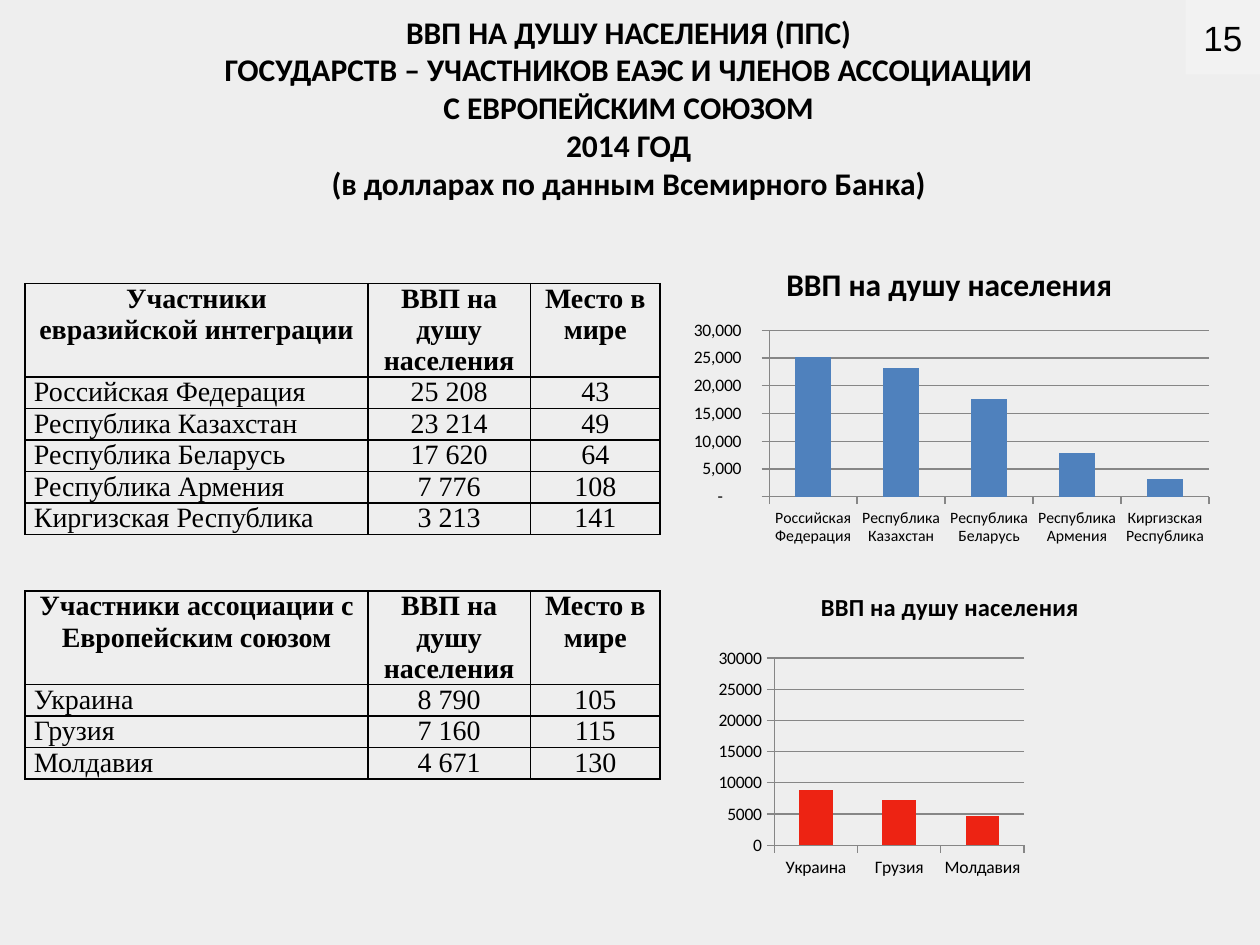
from lxml import etree
from pptx import Presentation
from pptx.chart.data import CategoryChartData
from pptx.dml.color import RGBColor
from pptx.enum.chart import XL_CHART_TYPE, XL_TICK_MARK
from pptx.enum.shapes import MSO_SHAPE
from pptx.enum.text import MSO_ANCHOR, MSO_AUTO_SIZE, PP_ALIGN
from pptx.oxml import parse_xml
from pptx.oxml.ns import nsdecls, qn
from pptx.util import Inches, Pt

COLUMNS = XL_CHART_TYPE.COLUMN_CLUSTERED
TICK_OUT = XL_TICK_MARK.OUTSIDE
RECTANGLE = MSO_SHAPE.RECTANGLE
TOP, MIDDLE = MSO_ANCHOR.TOP, MSO_ANCHOR.MIDDLE
NO_AUTOFIT = MSO_AUTO_SIZE.NONE
LEFT, CENTER = PP_ALIGN.LEFT, PP_ALIGN.CENTER

COLORS = {
    "background": "EEEEEE",
    "text": "000000",
    "number": "FFFFFF",
    "union": "4F81BD",
    "association": "ED2313",
    "grid": "868686",
}
GDP = "ВВП на душу населения"


def rgb(name):
    return RGBColor.from_string(COLORS[name])


def set_font(font, **values):
    for attribute, value in values.items():
        setattr(font, attribute, value)
    font.color.rgb = rgb("text")


prs = Presentation()
prs.slide_width, prs.slide_height = Inches(10), Inches(7.5)
slide = prs.slides.add_slide(prs.slide_layouts[5])
slide.background.fill.solid()
slide.background.fill.fore_color.rgb = rgb("background")

# Title
heading = slide.shapes.title
heading.left, heading.top = Inches(0.02), Inches(0.05)
heading.width, heading.height = Inches(9.94), Inches(1.62)
heading_frame = heading.text_frame
heading_frame.text = "\n".join([
    "ВВП НА ДУШУ НАСЕЛЕНИЯ (ППС)",
    "ГОСУДАРСТВ – УЧАСТНИКОВ ЕАЭС И ЧЛЕНОВ АССОЦИАЦИИ",
    "С ЕВРОПЕЙСКИМ СОЮЗОМ",
    "2014 ГОД",
    "(в долларах по данным Всемирного Банка)",
])
heading_frame.auto_size = NO_AUTOFIT
heading_frame.vertical_anchor = TOP
for line in heading_frame.paragraphs:
    line.alignment = CENTER
    set_font(line.font, name="Calibri", size=Pt(18), bold=True)

# Tables: top edge, heading of the first column, rows
tables = [
    (2.25, "Участники\nевразийской интеграции", [
        ("Российская Федерация", "25 208", "43"),
        ("Республика Казахстан", "23 214", "49"),
        ("Республика Беларусь", "17 620", "64"),
        ("Республика Армения", "7 776", "108"),
        ("Киргизская Республика", "3 213", "141"),
    ]),
    (4.69, "Участники ассоциации с Европейским союзом", [
        ("Украина", "8 790", "105"),
        ("Грузия", "7 160", "115"),
        ("Молдавия", "4 671", "130"),
    ]),
]
column_widths = [2.72, 1.29, 1.03]
header_height, row_height = 0.74, 0.25
for top, members, countries in tables:
    rows = [(members, GDP, "Место в мире"), *countries]
    table = slide.shapes.add_table(
        len(rows), 3, Inches(0.2), Inches(top), Inches(sum(column_widths)),
        Inches(header_height + row_height * len(countries))).table
    table.first_row = table.horz_banding = False
    for column, width in zip(table.columns, column_widths):
        column.width = Inches(width)
    for r, row in enumerate(rows):
        table.rows[r].height = Inches(row_height if r else header_height)
        for c, text in enumerate(row):
            cell = table.cell(r, c)
            cell.text = text
            cell.margin_left = cell.margin_right = Inches(0.07)
            cell.margin_top = cell.margin_bottom = 0
            cell.fill.background()
            for paragraph in cell.text_frame.paragraphs:
                paragraph.alignment = LEFT if r and c == 0 else CENTER
                set_font(paragraph.font, name="Times New Roman", size=Pt(16), bold=r == 0)
            # Cell borders
            for i, side in enumerate(("lnL", "lnR", "lnT", "lnB")):
                cell._tc.get_or_add_tcPr().insert(i, parse_xml(
                    f'<a:{side} {nsdecls("a")} w="{Pt(1)}"><a:solidFill>'
                    f'<a:srgbClr val="{COLORS["text"]}"/></a:solidFill></a:{side}>'))

# Charts
charts = [
    {
        "box": (5.39, 1.94, 4.29, 2.44), "color": "union",
        "title_size": 18, "label_size": 9,
        "format": '_-* #,##0_р_._-;\\-* #,##0_р_._-;_-* "-"??_р_._-;_-@_-',
        "values": {"Российская Федерация": 25200, "Республика Казахстан": 23200,
                   "Республика Беларусь": 17600, "Республика Армения": 7800,
                   "Киргизская Республика": 3200},
        "plot": None,
    },
    {
        "box": (5.47, 4.54, 4.14, 2.57), "color": "association",
        "title_size": 14, "label_size": 10, "format": "General",
        "values": {"Украина": 8800, "Грузия": 7200, "Молдавия": 4700},
        "plot": {"x": 0.163, "y": 0.266, "w": 0.479, "h": 0.578},
    },
]
for item in charts:
    data = CategoryChartData()
    data.categories = list(item["values"])
    data.add_series(GDP, list(item["values"].values()))
    chart = slide.shapes.add_chart(COLUMNS, *map(Inches, item["box"]), data).chart
    set_font(chart.font, name="Calibri", size=Pt(10))
    chart.has_legend = False
    chart.has_title = True
    chart.chart_title.include_in_layout = False
    chart.chart_title.text_frame.text = GDP
    set_font(chart.chart_title.text_frame.paragraphs[0].runs[0].font,
             name="Calibri", size=Pt(item["title_size"]), bold=True)

    columns = chart.plots[0]
    columns.gap_width = 150
    columns.vary_by_categories = False
    series_fill = columns.series[0].format.fill
    series_fill.solid()
    series_fill.fore_color.rgb = rgb(item["color"])

    countries_axis, gdp_axis = chart.category_axis, chart.value_axis
    set_font(countries_axis.tick_labels.font, size=Pt(item["label_size"]))
    gdp_axis.minimum_scale, gdp_axis.maximum_scale = 0, 30000
    gdp_axis.major_unit = 5000
    gdp_axis.has_major_gridlines = True
    gdp_axis.tick_labels.number_format = item["format"]
    gdp_axis.tick_labels.number_format_is_linked = False
    for axis in (countries_axis, gdp_axis):
        axis.major_tick_mark = TICK_OUT
    for part in (countries_axis, gdp_axis, gdp_axis.major_gridlines):
        part.format.line.color.rgb = rgb("grid")
        part.format.line.width = Pt(0.75)

    # Fixed plot area
    if item["plot"]:
        plot_area = chart._chartSpace.chart.plotArea
        for old in plot_area.findall(qn("c:layout")):
            plot_area.remove(old)
        settings = {"layoutTarget": "inner", "xMode": "edge", "yMode": "edge", **item["plot"]}
        layout = etree.Element(qn("c:layout"))
        manual = etree.SubElement(layout, qn("c:manualLayout"))
        for tag, value in settings.items():
            etree.SubElement(manual, qn(f"c:{tag}"), val=str(value))
        plot_area.insert(0, layout)

# Slide number
number = slide.shapes.add_shape(
    RECTANGLE, Inches(9.41), Inches(0), Inches(0.59), Inches(0.59))
number.shadow.inherit = False
number.line.fill.background()
number.fill.solid()
number.fill.fore_color.rgb = rgb("number")
white = number._element.spPr.find(qn("a:solidFill"))[0]
etree.SubElement(white, qn("a:alpha"), val="25000")
number_frame = number.text_frame
for side in ("left", "top", "right", "bottom"):
    setattr(number_frame, f"margin_{side}", 0)
number_frame.vertical_anchor = MIDDLE
number_frame.text = "15"
number_frame.paragraphs[0].alignment = CENTER
set_font(number_frame.paragraphs[0].font, name="Arial", size=Pt(20))

prs.save("out.pptx")
